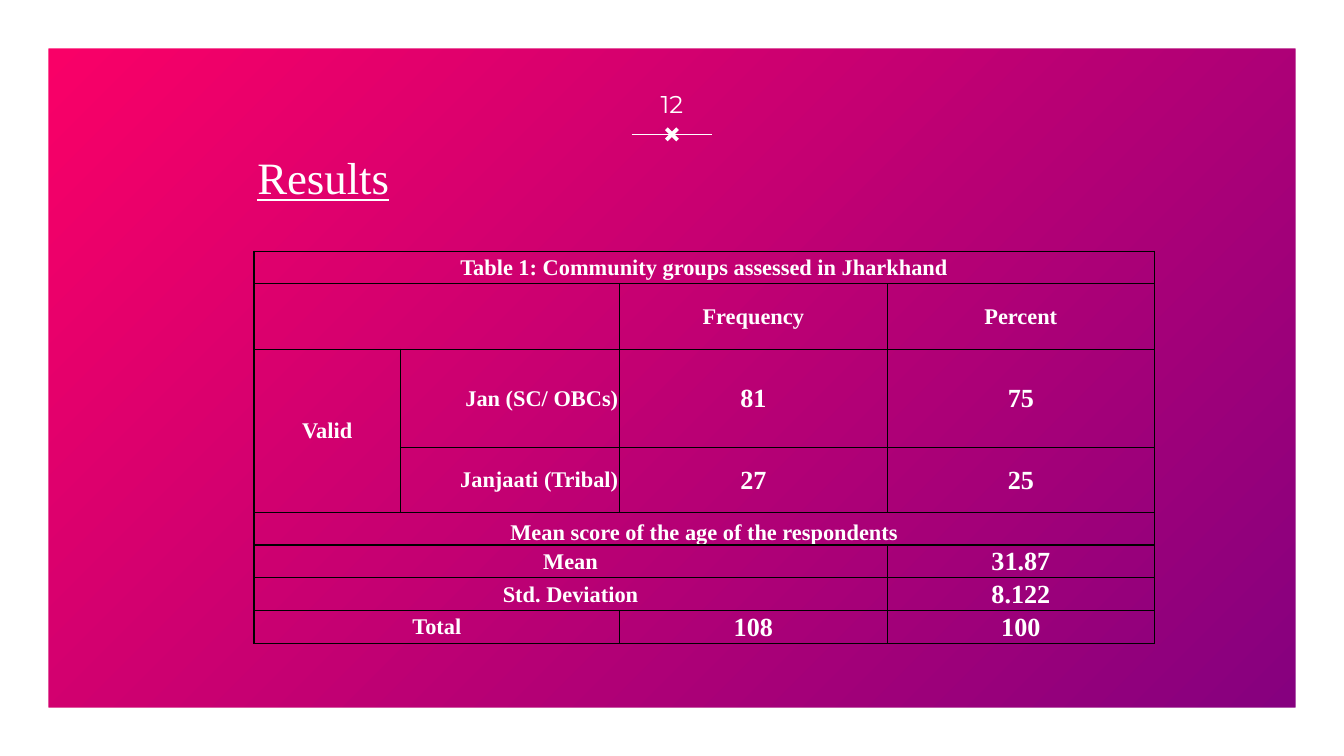
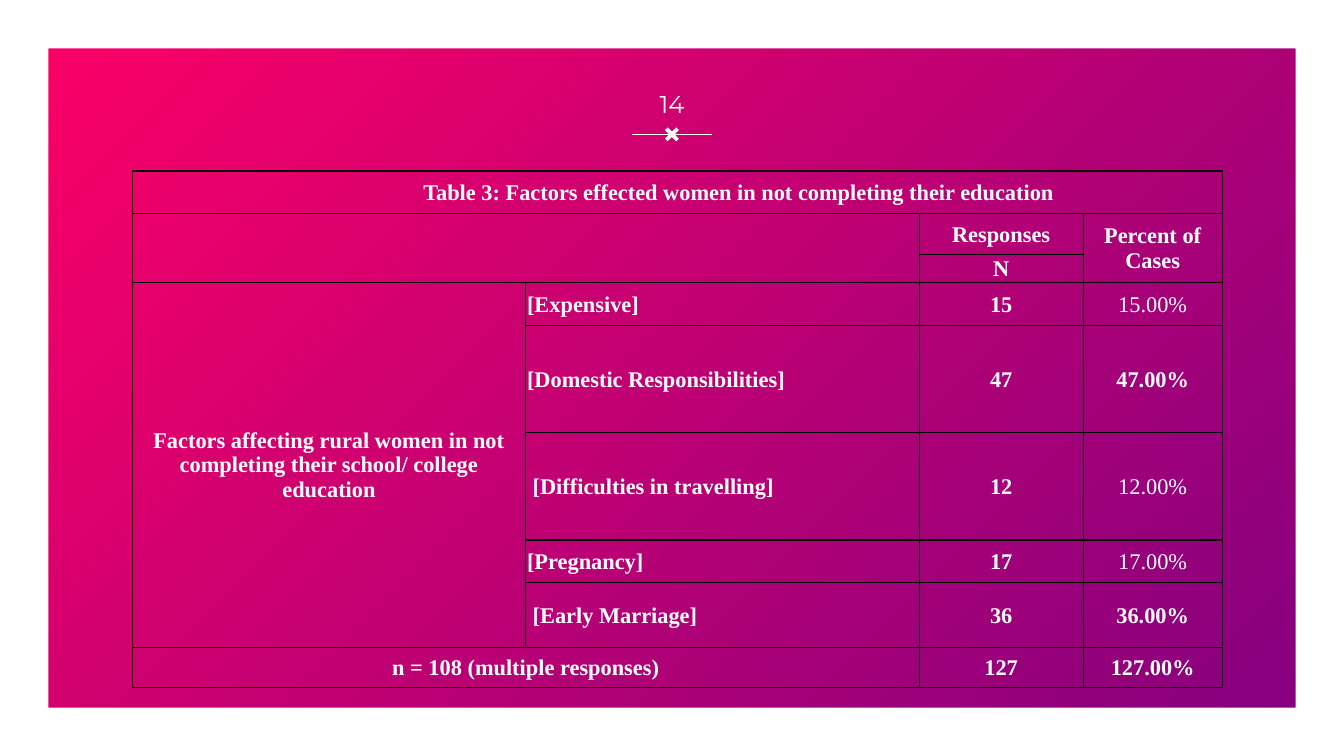
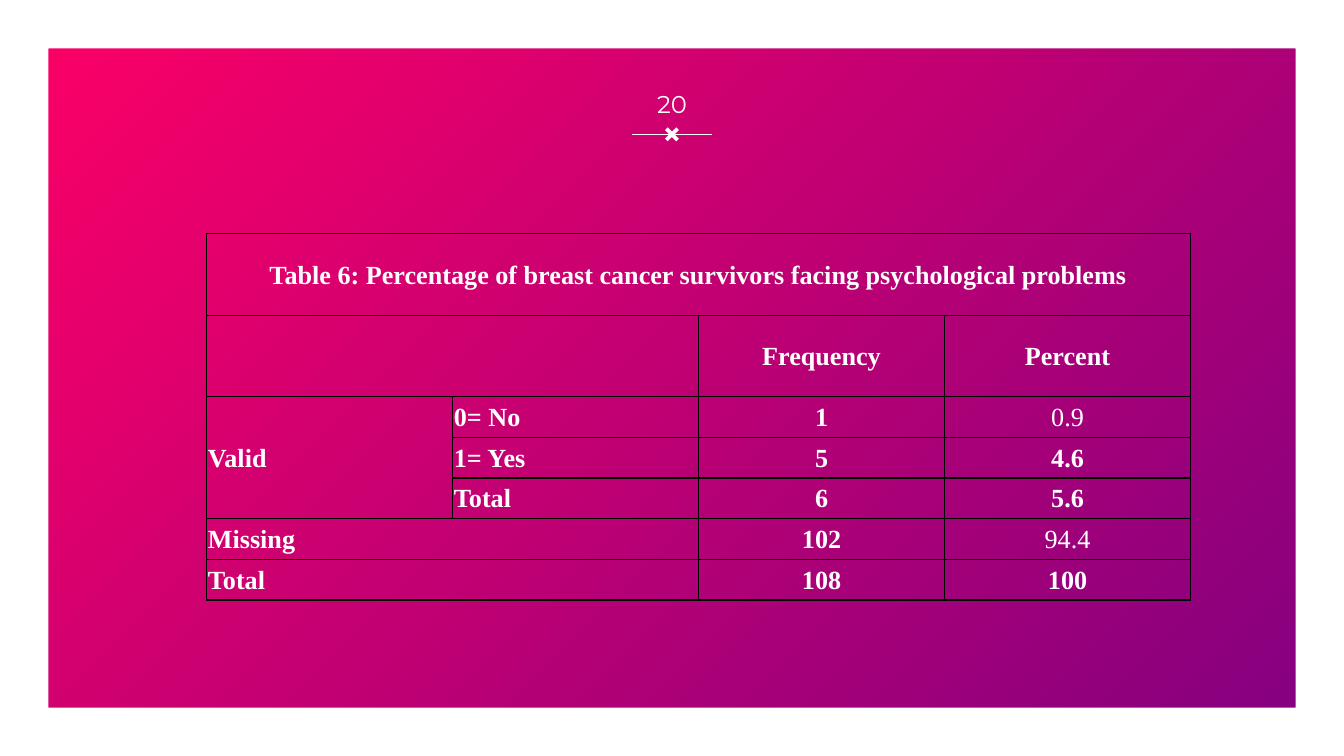
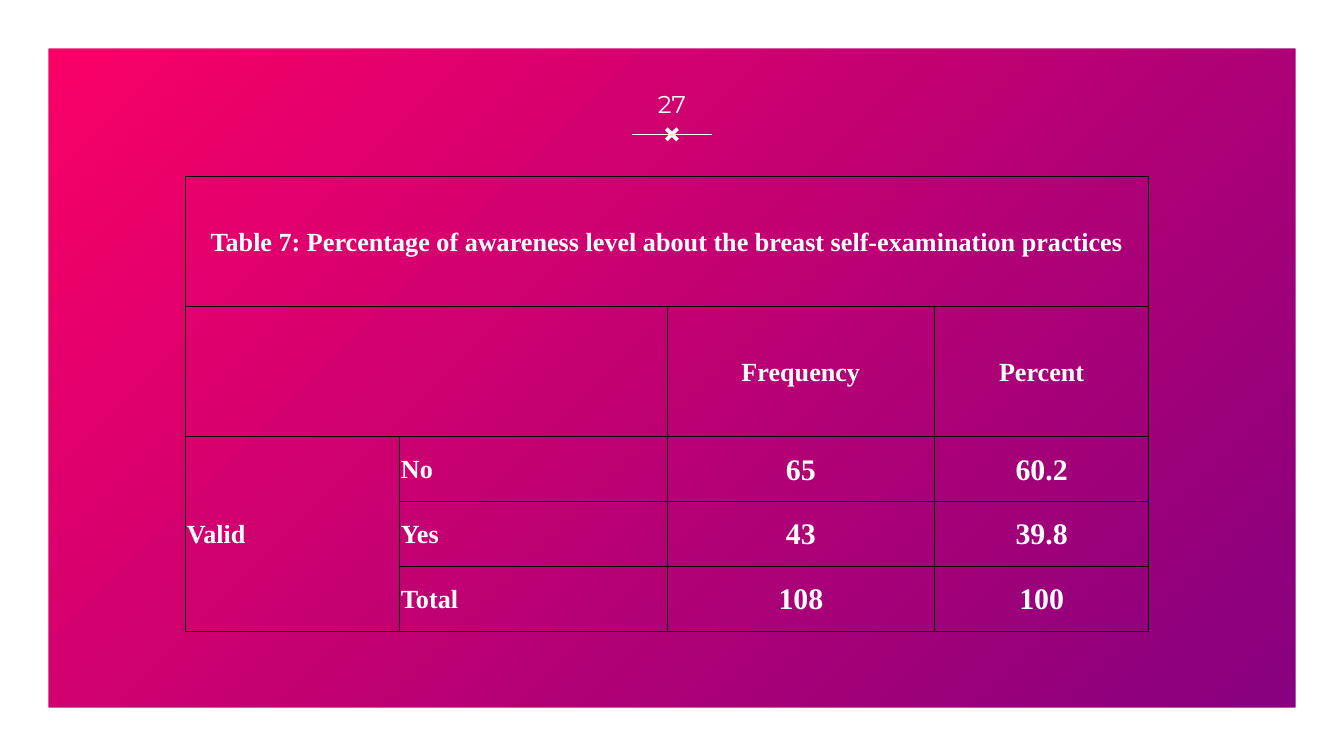
from lxml import etree
from pptx import Presentation
from pptx.dml.color import RGBColor
from pptx.enum.shapes import MSO_CONNECTOR, MSO_SHAPE
from pptx.enum.text import MSO_ANCHOR, PP_ALIGN
from pptx.oxml.ns import qn
from pptx.util import Pt

LEFT, CENTER, RIGHT = PP_ALIGN.LEFT, PP_ALIGN.CENTER, PP_ALIGN.RIGHT
MIDDLE, BOTTOM = MSO_ANCHOR.MIDDLE, MSO_ANCHOR.BOTTOM
FRAME, CROSS = MSO_SHAPE.FRAME, MSO_SHAPE.MATH_MULTIPLY
STRAIGHT = MSO_CONNECTOR.STRAIGHT

COLORS = {"pink": "FF0066", "purple": "800080", "white": "FFFFFF", "border": "000000"}
SERIF, SANS = "Times New Roman", "Montserrat"
TITLE_ONLY, BLANK = 5, 6


def write(box, text, size=12, font=SERIF, bold=False, underline=None,
          align=CENTER, anchor=MIDDLE, margins=(7.2, 7.2, 7.2, 7.2)):
    """Fill a text frame or a table cell with one formatted paragraph."""
    box.margin_left, box.margin_top, box.margin_right, box.margin_bottom = map(Pt, margins)
    box.vertical_anchor = anchor
    frame = getattr(box, "text_frame", box)
    frame.word_wrap = True
    paragraph = frame.paragraphs[0]
    paragraph.alignment = align
    if not text:
        etree.SubElement(paragraph._p, qn("a:endParaRPr"), sz=str(size * 100))
        return
    run = paragraph.add_run()
    run.text = text
    run.font.size, run.font.name = Pt(size), font
    run.font.bold, run.font.underline = bold, underline
    run.font.color.rgb = RGBColor.from_string(COLORS["white"])


def add_borders(cell):
    """Draw a thin line on all four sides of a cell."""
    properties = cell._tc.get_or_add_tcPr()
    for position, side in enumerate(("lnL", "lnR", "lnT", "lnB")):
        line = etree.Element(qn(f"a:{side}"), w=str(Pt(0.75)))
        solid = etree.SubElement(line, qn("a:solidFill"))
        etree.SubElement(solid, qn("a:srgbClr"), val=COLORS["border"])
        properties.insert(position, line)


# Content: merges are (row, column, rows, columns); None marks a covered cell
LIGHT_VALUES = {"15.00%", "12.00%", "17.00%", "0.9", "94.4"}
PAGES = [
    {
        "number": "12", "title": "Results", "at": (136.1, 134.6),
        "columns": [78.5, 117.4, 143.3, 143.3],
        "heights": [17.5, 35, 52.5, 35, 17.5, 17.5, 17.5, 17.5],
        "label_size": 12, "value_size": 14, "body_align": {1: RIGHT}, "bottom_row": 4,
        "merges": [(0, 0, 1, 4), (1, 0, 1, 2), (2, 0, 2, 1), (4, 0, 1, 4),
                   (5, 0, 1, 3), (6, 0, 1, 3), (7, 0, 1, 2)],
        "rows": [
            ["Table 1: Community groups assessed in Jharkhand", None, None, None],
            [None, None, "Frequency", "Percent"],
            ["Valid", "Jan (SC/ OBCs)", "81", "75"],
            [None, "Janjaati (Tribal)", "27", "25"],
            ["Mean score of the age of the respondents", None, None, None],
            ["Mean", None, None, "31.87"],
            ["Std. Deviation", None, None, "8.122"],
            ["Total", None, "108", "100"],
        ],
    },
    {
        "number": "14", "at": (70.9, 91.6), "caption_indent": 66.7,
        "columns": [210.8, 210.8, 87.8, 74.6],
        "heights": [23, 21.6, 11.6, 23, 57.5, 57.5, 23, 34.5, 21.6],
        "label_size": 12, "value_size": 12, "body_align": {1: LEFT},
        "merges": [(0, 0, 1, 4), (1, 0, 2, 2), (1, 3, 2, 1), (3, 0, 5, 1), (8, 0, 1, 2)],
        "rows": [
            ["Table 3: Factors effected women in not completing their education",
             None, None, None],
            [None, None, "Responses", "Percent of Cases"],
            [None, None, "N", None],
            ["Factors affecting rural women in not completing their school/ college education",
             "[Expensive]", "15", "15.00%"],
            [None, "[Domestic Responsibilities]", "47", "47.00%"],
            [None, " [Difficulties in travelling]", "12", "12.00%"],
            [None, "[Pregnancy]", "17", "17.00%"],
            [None, " [Early Marriage]", "36", "36.00%"],
            ["n = 108 (multiple responses)", None, "127", "127.00%"],
        ],
    },
    {
        "number": "20", "at": (110.7, 125.3),
        "columns": [131.8] * 4,
        "heights": [43.6] * 2 + [21.8] * 5,
        "label_size": 14, "value_size": 14, "body_align": {0: LEFT, 1: LEFT},
        "merges": [(0, 0, 1, 4), (1, 0, 1, 2), (2, 0, 3, 1), (5, 0, 1, 2), (6, 0, 1, 2)],
        "rows": [
            ["Table 6: Percentage of breast cancer survivors facing psychological problems",
             None, None, None],
            [None, None, "Frequency", "Percent"],
            ["Valid", "0= No", "1", "0.9"],
            [None, "1= Yes", "5", "4.6"],
            [None, "Total", "6", "5.6"],
            ["Missing", None, "102", "94.4"],
            ["Total", None, "108", "100"],
        ],
    },
    {
        "number": "27", "at": (99.4, 94.7),
        "columns": [114.7, 143.3, 143.3, 114.7],
        "heights": [69.7] * 2 + [34.8] * 3,
        "label_size": 14, "value_size": 16, "body_align": {0: LEFT, 1: LEFT},
        "merges": [(0, 0, 1, 4), (1, 0, 1, 2), (2, 0, 3, 1)],
        "rows": [
            ["Table 7: Percentage of awareness level about the breast self-examination practices",
             None, None, None],
            [None, None, "Frequency", "Percent"],
            ["Valid", "No", "65", "60.2"],
            [None, "Yes", "43", "39.8"],
            [None, "Total", "108", "100"],
        ],
    },
]

deck = Presentation()
deck.slide_width, deck.slide_height = Pt(720), Pt(405)
master = deck.slide_master

# Shared gradient background
backdrop = master.background.fill
backdrop.gradient()
backdrop.gradient_angle = 315
for stop, position, color in zip(backdrop.gradient_stops, (0, 1), ("pink", "purple")):
    stop.position = position
    stop.color.rgb = RGBColor.from_string(COLORS[color])

for page in PAGES:
    slide = deck.slides.add_slide(deck.slide_layouts[TITLE_ONLY if "title" in page else BLANK])
    shapes = slide.shapes

    # White frame and crossed rule, made once and moved to the master
    if page is PAGES[0]:
        decorations = []
        for preset, adjustment, box in ((FRAME, 0.064, (0, 0, 720, 405)),
                                        (CROSS, 0.174, (354.2, 66.2, 11.6, 11.6))):
            decoration = shapes.add_shape(preset, *map(Pt, box))
            decoration.adjustments[0] = adjustment
            decoration.shadow.inherit = False
            decoration.fill.solid()
            decoration.fill.fore_color.rgb = RGBColor.from_string(COLORS["white"])
            decoration.line.fill.background()
            decorations.append(decoration)
        rule = shapes.add_connector(STRAIGHT, Pt(338.4), Pt(72), Pt(381.6), Pt(72))
        rule.line.color.rgb = RGBColor.from_string(COLORS["white"])
        rule.line.width = Pt(0.75)
        etree.SubElement(rule.element.spPr, qn("a:effectLst"))
        decorations.insert(1, rule)
        for shape_id, decoration in enumerate(decorations, start=101):
            decoration.element.xpath(".//p:cNvPr")[0].set("id", str(shape_id))
            master.shapes.element.append(decoration.element)

    # Page number and title
    number = shapes.add_textbox(Pt(338.4), Pt(40.3), Pt(43.2), Pt(31))
    write(number.text_frame, page["number"], size=13, font=SANS)
    if "title" in page:
        title = shapes.title
        title.left, title.top, title.width, title.height = map(Pt, (54, 77.8, 238.3, 33.8))
        write(title.text_frame, page["title"], size=24, underline=True)

    # Results table
    rows, columns, heights = page["rows"], page["columns"], page["heights"]
    left, top = page["at"]
    table = shapes.add_table(len(rows), len(columns), Pt(left), Pt(top),
                             Pt(sum(columns)), Pt(sum(heights))).table
    table.first_row = table.horz_banding = False
    for column, width in zip(table.columns, columns):
        column.width = Pt(width)
    for row, height in zip(table.rows, heights):
        row.height = Pt(height)
    for r, texts in enumerate(rows):
        for c, text in enumerate(texts):
            cell = table.cell(r, c)
            is_value = bool(text) and text.replace(".", "").isdigit()
            indent = page.get("caption_indent", 0.7) if r == 0 else 0.7
            write(cell, text,
                  size=page["value_size" if is_value else "label_size"],
                  bold=text not in LIGHT_VALUES,
                  align=page["body_align"].get(c, CENTER) if r >= 2 else CENTER,
                  anchor=BOTTOM if r == page.get("bottom_row") else MIDDLE,
                  margins=(indent, 0.7, 0.7, 0))
            cell.fill.background()
            add_borders(cell)
    for r, c, row_span, column_span in page["merges"]:
        table.cell(r, c).merge(table.cell(r + row_span - 1, c + column_span - 1))

deck.save("out.pptx")
